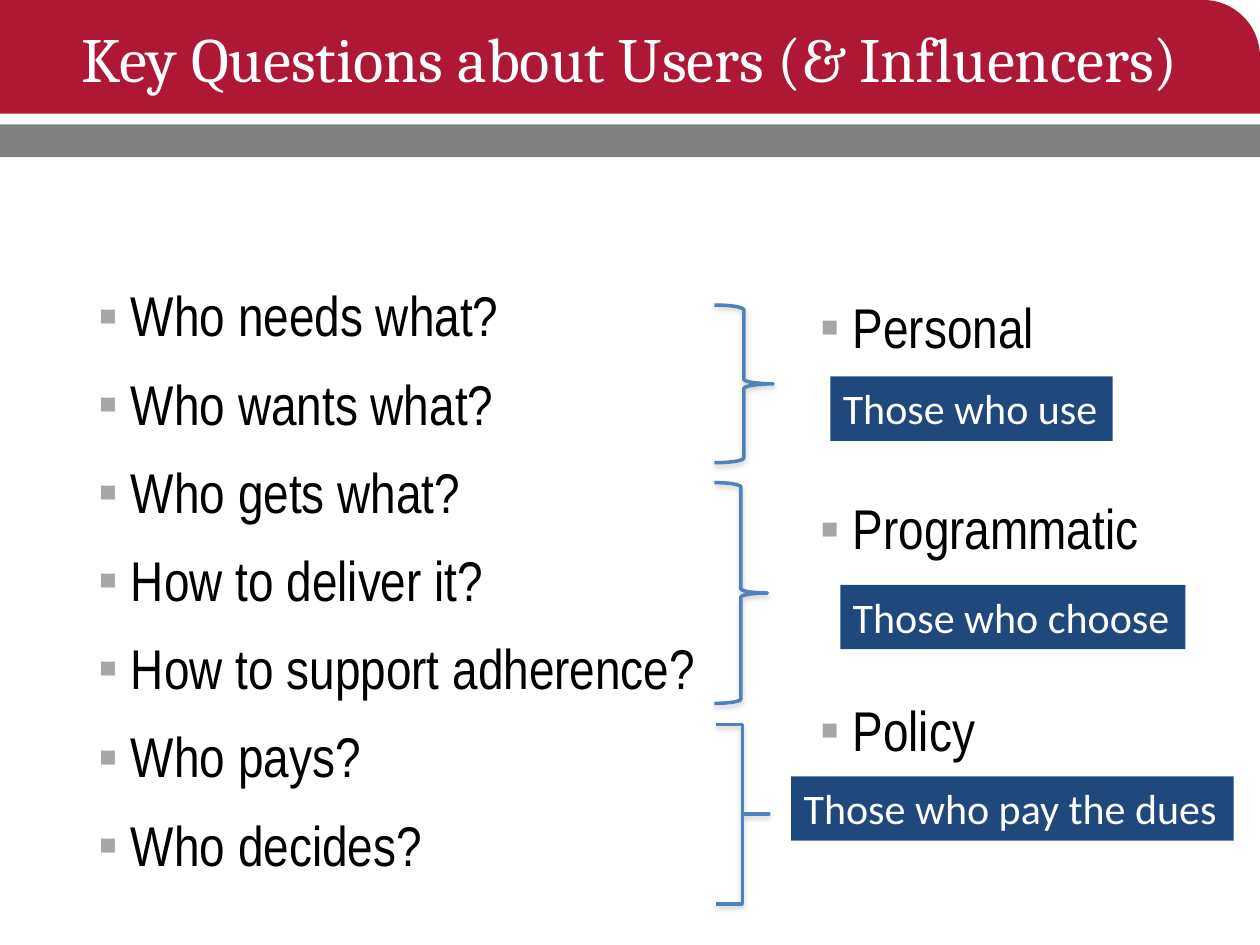
from dataclasses import dataclass

from lxml.etree import SubElement
from pptx import Presentation
from pptx.dml.color import RGBColor as Rgb
from pptx.enum.shapes import MSO_SHAPE as Kind
from pptx.enum.text import MSO_ANCHOR as Anchor, MSO_AUTO_SIZE as Fit, PP_ALIGN as Align
from pptx.oxml.ns import qn
from pptx.util import Cm, Pt

HUES = {
    "red": "AE1835", "gray": "808080", "mark": "A6A6A6", "blue": "4F81BD",
    "navy": "1F497D", "white": "FFFFFF", "black": "000000",
}


@dataclass
class Box:
    """Place and size in centimetres."""
    x: float
    y: float
    w: float
    h: float

    def args(self) -> list[Cm]:
        return [Cm(v) for v in (self.x, self.y, self.w, self.h)]


@dataclass
class Items:
    box: Box
    lines: list[str]
    after: float
    pitch: float = 1.0


@dataclass
class Brace:
    box: Box
    curve: float


@dataclass
class Tag:
    box: Box
    text: str


def hue(name: str) -> Rgb:
    return Rgb.from_string(HUES[name])


def write(para, text: str, font: str, size: int, color: str) -> None:
    run = para.add_run()
    run.text = text
    run.font.name = font
    run.font.size = Pt(size)
    run.font.color.rgb = hue(color)


def block(slide, kind, box: Box, fill: str):
    shape = slide.shapes.add_shape(kind, *box.args())
    shape.shadow.inherit = False
    shape.fill.solid()
    shape.fill.fore_color.rgb = hue(fill)
    shape.line.fill.background()
    return shape


def bullet(para) -> None:
    props = para._p.get_or_add_pPr()
    props.set("marL", str(Cm(0.66)))
    props.set("indent", str(-Cm(0.66)))
    color = SubElement(props, qn("a:buClr"))
    SubElement(color, qn("a:srgbClr"), val=HUES["mark"])
    SubElement(props, qn("a:buFont"), typeface="Arial")
    SubElement(props, qn("a:buChar"), char="▪")


def draw_items(slide, items: Items) -> None:
    frame = slide.shapes.add_textbox(*items.box.args()).text_frame
    frame.word_wrap = True
    for i, line in enumerate(items.lines):
        para = frame.add_paragraph() if i else frame.paragraphs[0]
        para.line_spacing = items.pitch
        para.space_after = Pt(items.after)
        bullet(para)
        write(para, line, "Arial Narrow", 32, "black")


def draw_brace(slide, brace: Brace) -> None:
    shape = slide.shapes.add_shape(Kind.RIGHT_BRACE, *brace.box.args())
    shape.adjustments[0] = brace.curve
    shape.adjustments[1] = 0.5
    shape.fill.background()
    shape.line.color.rgb = hue("blue")
    shape.line.width = Pt(2)
    # Soft shadow straight below
    shape.shadow.inherit = False
    effects = shape._element.spPr.find(qn("a:effectLst"))
    shade = SubElement(effects, qn("a:outerShdw"), blurRad=str(Pt(3.1)),
                       dist=str(Pt(1.6)), dir="5400000", rotWithShape="0")
    color = SubElement(shade, qn("a:srgbClr"), val=HUES["gray"])
    SubElement(color, qn("a:alpha"), val="38000")


def draw_tag(slide, tag: Tag) -> None:
    frame = block(slide, Kind.RECTANGLE, tag.box, "navy").text_frame
    frame.word_wrap = False
    frame.auto_size = Fit.SHAPE_TO_FIT_TEXT
    frame.vertical_anchor = Anchor.TOP
    para = frame.paragraphs[0]
    para.alignment = Align.LEFT
    write(para, tag.text, "Calibri", 24, "white")


LISTS = [
    Items(Box(1.73, 5.54, 12.9, 13.77),
          ["Who needs what?", "Who wants what?", "Who gets what?",
           "How to deliver it?", "How to support adherence?",
           "Who pays?", "Who decides?"], 12),
    Items(Box(16.28, 5.1, 8.26, 12.6),
          ["Personal", "Programmatic", "Policy"], 57.4, 1.5),
]
BRACES = [
    Brace(Box(14.4, 6.15, 1.19, 3.18), 0.08),
    Brace(Box(14.4, 9.73, 1.07, 4.45), 0.08),
    Brace(Box(14.43, 14.61, 1.07, 3.61), 0),
]
TAGS = [
    Tag(Box(16.74, 7.59, 5.69, 1.3), "Those who use"),
    Tag(Box(16.94, 11.79, 6.96, 1.3), "Those who choose"),
    Tag(Box(15.95, 15.65, 8.92, 1.3), "Those who pay the dues"),
]


def main() -> None:
    deck = Presentation()
    deck.slide_width, deck.slide_height = Cm(25.4), Cm(19.05)
    slide = deck.slides.add_slide(deck.slide_layouts[6])

    # Header bands
    block(slide, Kind.RECTANGLE, Box(0, 2.51, 25.4, 0.66), "gray")
    head = block(slide, Kind.ROUND_1_RECTANGLE, Box(0, 0, 25.4, 2.29), "red")
    head.adjustments[0] = 0.5

    # Title
    frame = slide.shapes.add_textbox(*Box(0, -0.43, 25.4, 3.18).args()).text_frame
    frame.word_wrap = True
    frame.vertical_anchor = Anchor.MIDDLE
    para = frame.paragraphs[0]
    para.alignment = Align.CENTER
    write(para, "Key Questions about Users (& Influencers)", "Cambria", 36, "white")

    # Questions, levels, and what joins them
    for items in LISTS:
        draw_items(slide, items)
    for brace in BRACES:
        draw_brace(slide, brace)
    for tag in TAGS:
        draw_tag(slide, tag)

    deck.save("out.pptx")


if __name__ == "__main__":
    main()
